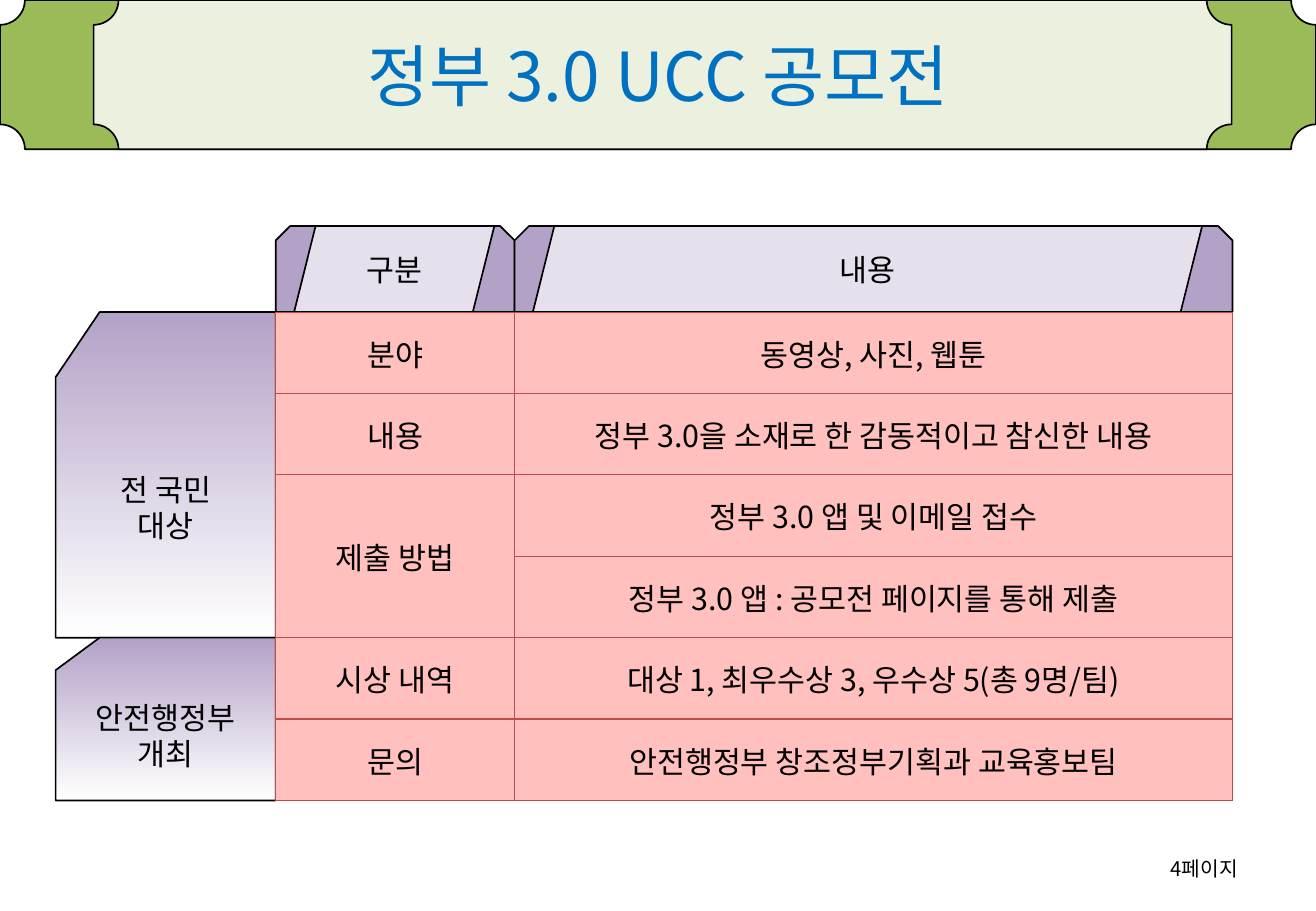
"""Builds the slide announcing the Government 3.0 UCC contest."""
from lxml import etree
from pptx import Presentation
from pptx.dml.color import RGBColor
from pptx.enum import shapes, text
from pptx.oxml.ns import qn
from pptx.util import Pt

FONT = "Noto Sans CJK KR"
COLORS = {
    "green": "9BBB59", "pale_green": "EBF1DE", "blue": "0070C0", "black": "000000",
    "purple": "B3A2C7", "pale_purple": "E6E0EC", "white": "FFFFFF",
    "pink": "FFC0BE", "red": "BF4C48",
}
TITLE = "정부 3.0 UCC 공모전"
PAGE = "4페이지"
BANDS = [(0, 780, "green"), (55.5, 674.5, "pale_green")]
HEADERS = [("구분", 141.5, 12), ("내용", 425.5, 18)]
GROUPS = [(["전 국민", "대상"], 4), (["안전행정부", "개최"], 2)]
ROWS = [
    ("분야", "동영상, 사진, 웹툰"),
    ("내용", "정부 3.0을 소재로 한 감동적이고 참신한 내용"),
    ("제출 방법", "정부 3.0 앱 및 이메일 접수"),
    ("", "정부 3.0 앱 : 공모전 페이지를 통해 제출"),
    ("시상 내역", "대상 1, 최우수상 3, 우수상 5(총 9명/팀)"),
    ("문의", "안전행정부 창조정부기획과 교육홍보팀"),
]
MERGED_ROWS = (2, 3)
BAND_H = 88.5
TABLE_X, TABLE_Y, ROW_H = 163.5, 185, 48.25
HEADER_H, HEADER_INSET = 51, 10.8
CARD_X = 33


def rgb(name):
    return RGBColor.from_string(COLORS[name])


def write(tf, lines, size=18, color="black", align=text.PP_ALIGN.CENTER):
    for i, line in enumerate(lines):
        p = tf.add_paragraph() if i else tf.paragraphs[0]
        p.text = line
        p.alignment = align
        p.font.size = Pt(size)
        p.font.name = FONT
        p.font.color.rgb = rgb(color)
        props = p._p.pPr.find(qn("a:defRPr"))
        etree.SubElement(props, qn("a:ea"), typeface=FONT)


def add_shape(slide, kind, box, fill, lines=()):
    sp = slide.shapes.add_shape(kind, *map(Pt, box))
    sp.shadow.inherit = False
    sp.line.color.rgb = rgb("black")
    sp.line.width = Pt(1)
    if isinstance(fill, tuple):
        sp.fill.gradient()
        sp.fill.gradient_angle = 270
        for stop, name, position in zip(sp.fill.gradient_stops, fill, (0, 1)):
            stop.color.rgb = rgb(name)
            stop.position = position
    else:
        sp.fill.solid()
        sp.fill.fore_color.rgb = rgb(fill)
    sp.text_frame.vertical_anchor = text.MSO_ANCHOR.MIDDLE
    write(sp.text_frame, lines)


def add_text(slide, box, line, **style):
    tf = slide.shapes.add_textbox(*map(Pt, box)).text_frame
    tf.word_wrap = True
    tf.vertical_anchor = text.MSO_ANCHOR.MIDDLE
    write(tf, [line], **style)


def style_cell(cell):
    cell.vertical_anchor = text.MSO_ANCHOR.MIDDLE
    cell.fill.solid()
    cell.fill.fore_color.rgb = rgb("pink")
    props = cell._tc.get_or_add_tcPr()
    for i, side in enumerate(("lnL", "lnR", "lnT", "lnB")):
        ln = etree.Element(qn(f"a:{side}"), w=str(Pt(0.75)))
        fill = etree.SubElement(ln, qn("a:solidFill"))
        etree.SubElement(fill, qn("a:srgbClr"), val=COLORS["red"])
        props.insert(i, ln)


def add_contest_table(slide):
    width = sum(w for _, w, _ in HEADERS)
    box = (TABLE_X, TABLE_Y, width, ROW_H * len(ROWS))
    table = slide.shapes.add_table(len(ROWS), len(HEADERS), *map(Pt, box)).table
    for column, (_, w, _) in zip(table.columns, HEADERS):
        column.width = Pt(w)
    for r, row in enumerate(ROWS):
        table.rows[r].height = Pt(ROW_H)
        for c, value in enumerate(row):
            cell = table.cell(r, c)
            style_cell(cell)
            if value:
                write(cell.text_frame, [value])
    first, last = MERGED_ROWS
    table.cell(first, 0).merge(table.cell(last, 0))


def main():
    prs = Presentation()
    prs.slide_width, prs.slide_height = Pt(780), Pt(540)
    slide = prs.slides.add_slide(prs.slide_layouts[6])
    kinds = shapes.MSO_SHAPE

    for x, w, fill in BANDS:
        add_shape(slide, kinds.PLAQUE, (x, 0, w, BAND_H), fill)
    add_text(slide, (39, -0.75, 702, 90), TITLE, size=40, color="blue")
    add_text(slide, (558.75, 500.5, 182, 29), PAGE, size=12, align=text.PP_ALIGN.RIGHT)

    x, y = TABLE_X, TABLE_Y - HEADER_H
    for label, w, gap in HEADERS:
        add_shape(slide, kinds.SNIP_2_SAME_RECTANGLE, (x, y, w, HEADER_H), "purple")
        inner = (x + HEADER_INSET, y, w - HEADER_INSET - gap, HEADER_H)
        add_shape(slide, kinds.PARALLELOGRAM, inner, "pale_purple", [label])
        x += w

    y = TABLE_Y
    for lines, count in GROUPS:
        box = (CARD_X, y, TABLE_X - CARD_X, count * ROW_H)
        add_shape(slide, kinds.FLOWCHART_CARD, box, ("purple", "white"), lines)
        y += count * ROW_H

    add_contest_table(slide)
    prs.save("out.pptx")


if __name__ == "__main__":
    main()
